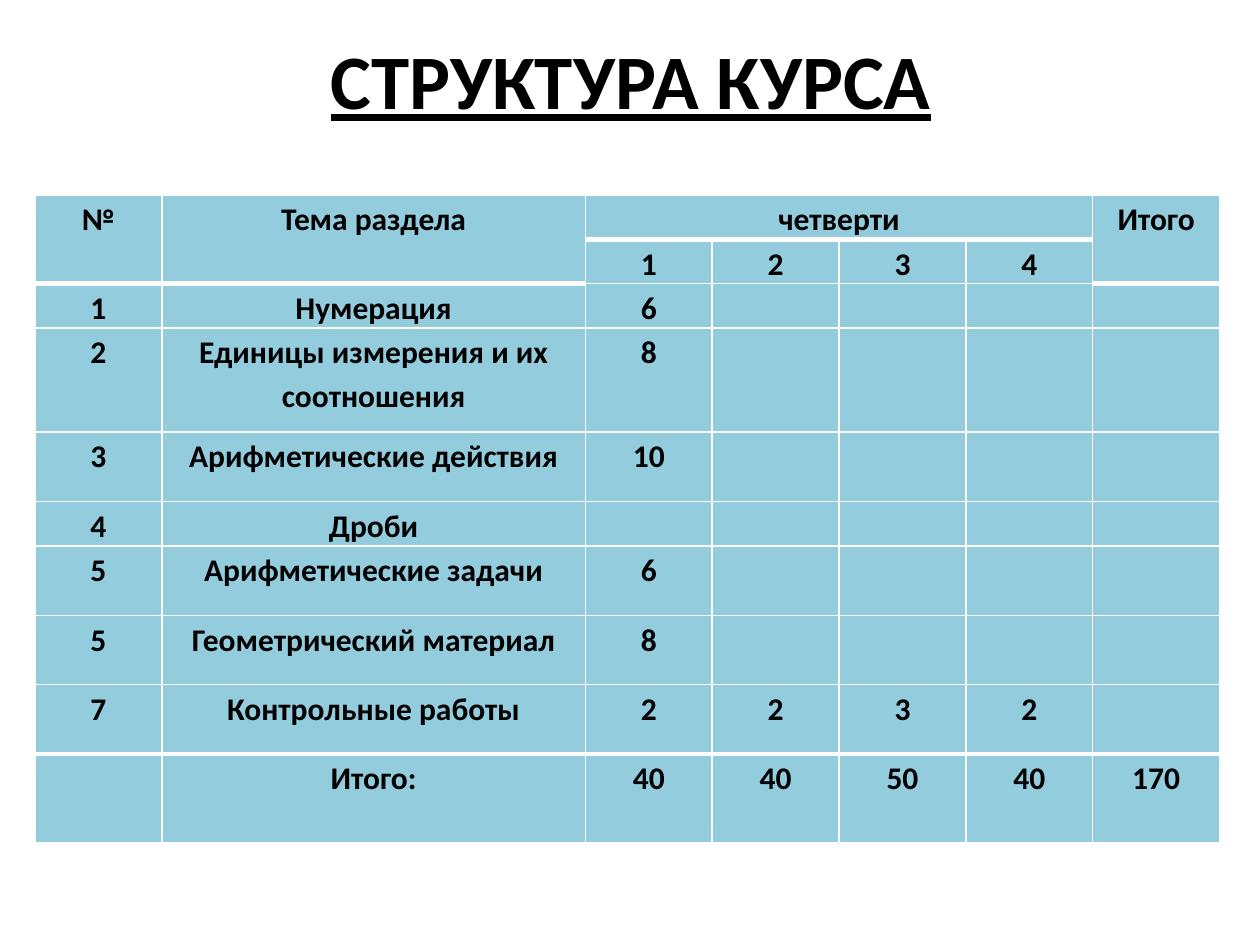
from pptx import Presentation
from pptx.dml.color import RGBColor
from pptx.enum.text import MSO_ANCHOR, PP_ALIGN
from pptx.oxml.ns import qn
from pptx.util import Pt
from lxml import etree

CENTER = PP_ALIGN.CENTER
TOP = MSO_ANCHOR.TOP
MIDDLE = MSO_ANCHOR.MIDDLE
BLACK = RGBColor(0x00, 0x00, 0x00)
WHITE = RGBColor(0xFF, 0xFF, 0xFF)
AQUA = RGBColor(0x93, 0xCD, 0xDD)

COLUMN_WIDTHS = [72.5, 242, 72.5, 72.5, 72.5, 72.5, 72.5]
ROW_HEIGHTS = [25.2, 25.2, 25.2, 59.6, 39.7, 25.2, 39.7, 39.7, 39.7, 50.4]
COURSE_ROWS = [
    ["№", "Тема раздела", "четверти", "", "", "", "Итого"],
    ["", "", "1", "2", "3", "4", ""],
    ["1", "Нумерация", "6", "", "", "", ""],
    ["2", "Единицы измерения и их соотношения", "8", "", "", "", ""],
    ["3", "Арифметические действия", "10", "", "", "", ""],
    ["4", "Дроби", "", "", "", "", ""],
    ["5", "Арифметические задачи", "6", "", "", "", ""],
    ["5", "Геометрический материал", "8", "", "", "", ""],
    ["7", "Контрольные работы", "2", "2", "3", "2", ""],
    ["", "Итого:", "40", "40", "50", "40", "170"],
]
HEADER_MERGES = [((0, 0), (1, 0)), ((0, 1), (1, 1)), ((0, 2), (0, 5)), ((0, 6), (1, 6))]
THICK_EDGES = {1: {2, 3, 4, 5}, 2: {0, 1, 6}, 9: set(range(7))}


class SlideBuilder:
    """Holds the text style and the current slide, and adds elements to it."""

    def __init__(self, slide, font_name="Calibri"):
        self.slide = slide
        self.font_name = font_name

    def format_paragraph(self, paragraph, size):
        paragraph.alignment = CENTER
        font = paragraph.font
        font.name = self.font_name
        font.size = Pt(size)
        font.bold = True
        font.color.rgb = BLACK

    def title(self, text, left, top, width, height):
        shape = self.slide.shapes.title
        shape.left, shape.top, shape.width, shape.height = map(Pt, (left, top, width, height))
        shape.fill.solid()
        shape.fill.fore_color.rgb = WHITE
        color = shape.element.spPr.find(".//" + qn("a:srgbClr"))
        etree.SubElement(color, qn("a:alpha"), val="80000")
        shape.text_frame.text = text
        shape.text_frame.vertical_anchor = MIDDLE
        paragraph = shape.text_frame.paragraphs[0]
        self.format_paragraph(paragraph, 44)
        paragraph.font.underline = True

    def borders(self, cell, widths):
        properties = cell._tc.get_or_add_tcPr()
        for side, width in widths.items():
            line = etree.SubElement(properties, qn(f"a:ln{side}"), w=str(Pt(width)))
            fill = etree.SubElement(line, qn("a:solidFill"))
            etree.SubElement(fill, qn("a:srgbClr"), val=str(WHITE))

    def cell(self, cell, text, top_border, bottom_border):
        self.borders(cell, {"L": 1, "R": 1, "T": top_border, "B": bottom_border})
        cell.fill.solid()
        cell.fill.fore_color.rgb = AQUA
        cell.margin_left = cell.margin_right = Pt(5)
        cell.margin_top = cell.margin_bottom = Pt(0)
        cell.vertical_anchor = TOP
        cell.text = text
        paragraph = cell.text_frame.paragraphs[0]
        paragraph.line_spacing = 1.15
        self.format_paragraph(paragraph, 18)

    def table(self, rows, left, top, column_widths, row_heights, merges, thick_edges):
        frame = self.slide.shapes.add_table(
            len(rows), len(column_widths), Pt(left), Pt(top),
            Pt(sum(column_widths)), Pt(sum(row_heights)))
        table = frame.table
        table.first_row = table.horz_banding = False
        for column, width in zip(table.columns, column_widths):
            column.width = Pt(width)
        for row, height in zip(table.rows, row_heights):
            row.height = Pt(height)
        for first, last in merges:
            table.cell(*first).merge(table.cell(*last))

        def edge_width(edge, column):
            return 3 if column in thick_edges.get(edge, ()) else 1

        for row, texts in enumerate(rows):
            for column, text in enumerate(texts):
                cell = table.cell(row, column)
                bottom_edge = row + cell.span_height
                self.cell(cell, text, edge_width(row, column), edge_width(bottom_edge, column))


def main():
    presentation = Presentation()
    presentation.slide_width = Pt(720)
    presentation.slide_height = Pt(540)
    slide = presentation.slides.add_slide(presentation.slide_layouts[5])
    builder = SlideBuilder(slide)
    builder.title("СТРУКТУРА КУРСА", 36.5, 0, 648, 90)
    builder.table(COURSE_ROWS, 20, 111.5, COLUMN_WIDTHS, ROW_HEIGHTS,
                  HEADER_MERGES, THICK_EDGES)
    presentation.save("out.pptx")


if __name__ == "__main__":
    main()
